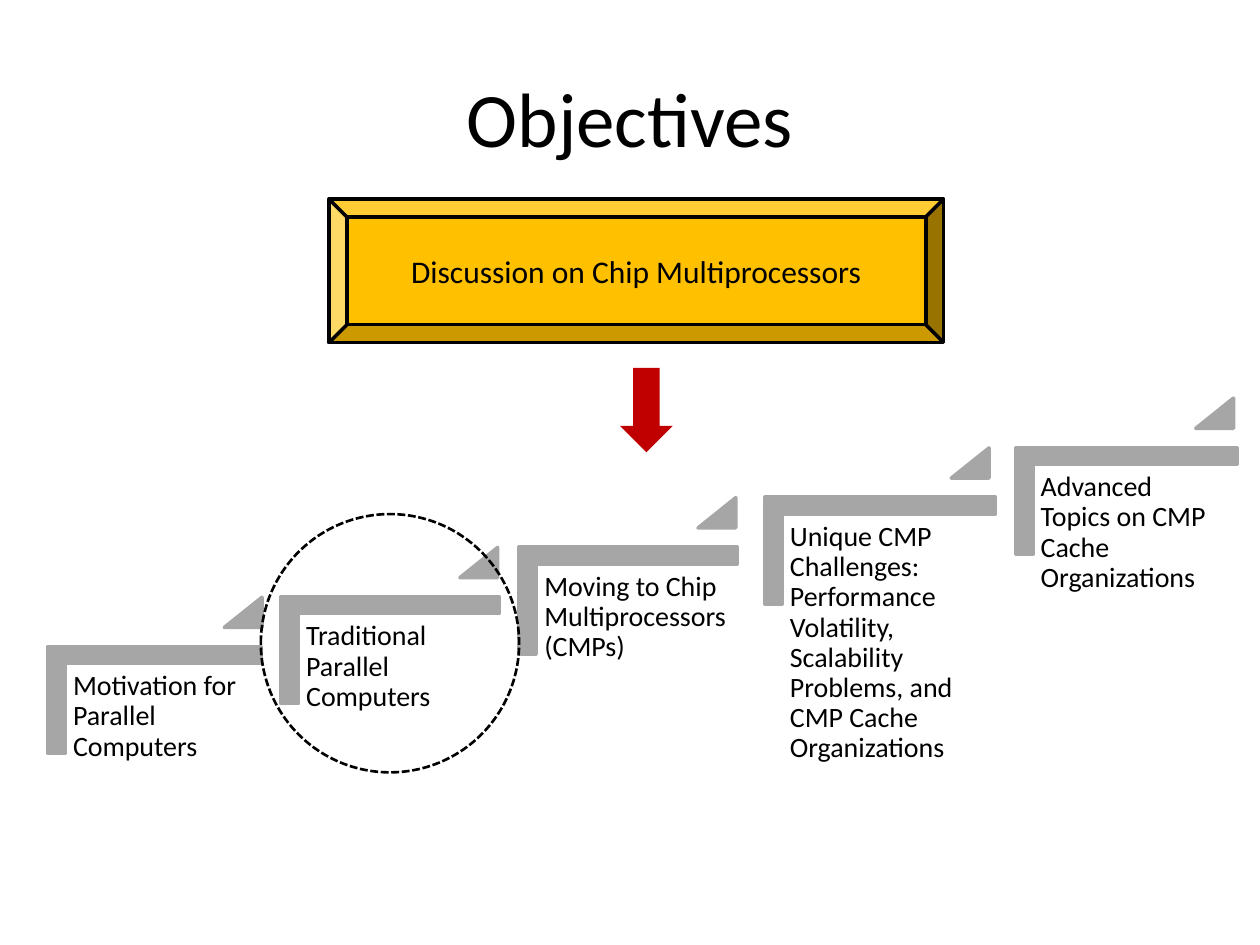
from pptx import Presentation
from pptx.dml.color import RGBColor
from pptx.enum.dml import MSO_LINE
from pptx.enum.shapes import MSO_SHAPE
from pptx.enum.text import MSO_ANCHOR, PP_ALIGN
from pptx.util import Inches, Pt

COLORS = {"black": "000000", "gold": "FFC000", "red": "C00000", "gray": "A6A6A6"}
FONT = "Calibri"
TITLE = "Objectives"
TOPIC = "Discussion on Chip Multiprocessors"
# text, left, length, text width, text height, flag left
STEPS = [
    ("Motivation for Parallel Computers", 0.38, 1.69, 1.7, 1.65, 1.78),
    ("Traditional Parallel Computers", 2.23, 1.73, 1.68, 1.7, 3.65),
    ("Moving to Chip Multiprocessors (CMPs)", 4.12, 1.73, 1.68, 1.7, 5.54),
    ("Unique CMP Challenges: Performance Volatility, Scalability Problems, "
     "and CMP Cache Organizations", 6.07, 1.83, 1.66, 2.09, 7.55),
    ("Advanced Topics on CMP Cache Organizations", 8.06, 1.76, 1.59, 1.12, 9.49),
]
FIRST_TOP, RISE, DEPTH, INSET = 5.13, 0.395, 0.85, 0.06


def color(name):
    return RGBColor.from_string(COLORS[name])


def add_shape(s, kind, box, fill=None, line=None, width=2):
    sp = s.shapes.add_shape(kind, *map(Inches, box))
    sp.shadow.inherit = False
    if fill:
        sp.fill.solid()
        sp.fill.fore_color.rgb = color(fill)
    else:
        sp.fill.background()
    if line:
        sp.line.color.rgb = color(line)
        sp.line.width = Pt(width)
    else:
        sp.line.fill.background()
    return sp


def set_text(sp, text, size, align, anchor):
    tf = sp.text_frame
    tf.word_wrap = True
    tf.vertical_anchor = anchor
    p = tf.paragraphs[0]
    p.text = text
    p.alignment = align
    p.font.size = Pt(size)
    p.font.name = FONT
    p.font.color.rgb = color("black")
    return tf


def add_step(s, index, text, left, length, text_w, text_h, flag_left):
    top = FIRST_TOP - index * RISE
    box = (left + (length - DEPTH) / 2, top + (DEPTH - length) / 2, DEPTH, length)
    corner = add_shape(s, MSO_SHAPE.CORNER, box, "gray", "gray")
    corner.rotation = 90
    corner.adjustments[0] = corner.adjustments[1] = 0.16

    label = s.shapes.add_textbox(*map(Inches, (left + 0.14, top + 0.14, text_w, text_h)))
    tf = set_text(label, text, 16, PP_ALIGN.LEFT, MSO_ANCHOR.TOP)
    tf.margin_left = tf.margin_right = tf.margin_top = tf.margin_bottom = Inches(INSET)
    tf.paragraphs[0].line_spacing = 0.9

    flag = add_shape(s, MSO_SHAPE.ISOSCELES_TRIANGLE,
                     (flag_left, top - 0.39, 0.3, 0.24), "gray", "gray")
    flag.adjustments[0] = 1


def main():
    """Build the objectives slide with its rising staircase of topics."""
    prs = Presentation()
    prs.slide_width, prs.slide_height = Inches(10), Inches(7.5)
    s = prs.slides.add_slide(prs.slide_layouts[5])

    title = s.shapes.title
    title.left, title.top, title.width, title.height = map(Inches, (0.5, 0.3, 9, 1.25))
    set_text(title, TITLE, 44, PP_ALIGN.CENTER, MSO_ANCHOR.MIDDLE)

    topic = add_shape(s, MSO_SHAPE.BEVEL, (2.61, 1.58, 4.88, 1.14), "gold", "black")
    set_text(topic, TOPIC, 18, PP_ALIGN.CENTER, MSO_ANCHOR.MIDDLE)
    add_shape(s, MSO_SHAPE.DOWN_ARROW, (4.92, 2.92, 0.42, 0.67), "red")

    for index, step in enumerate(STEPS):
        add_step(s, index, *step)

    focus = add_shape(s, MSO_SHAPE.OVAL, (2.07, 4.08, 2.05, 2.05), None, "black", 1.5)
    focus.line.dash_style = MSO_LINE.SQUARE_DOT

    prs.save("out.pptx")


if __name__ == "__main__":
    main()
